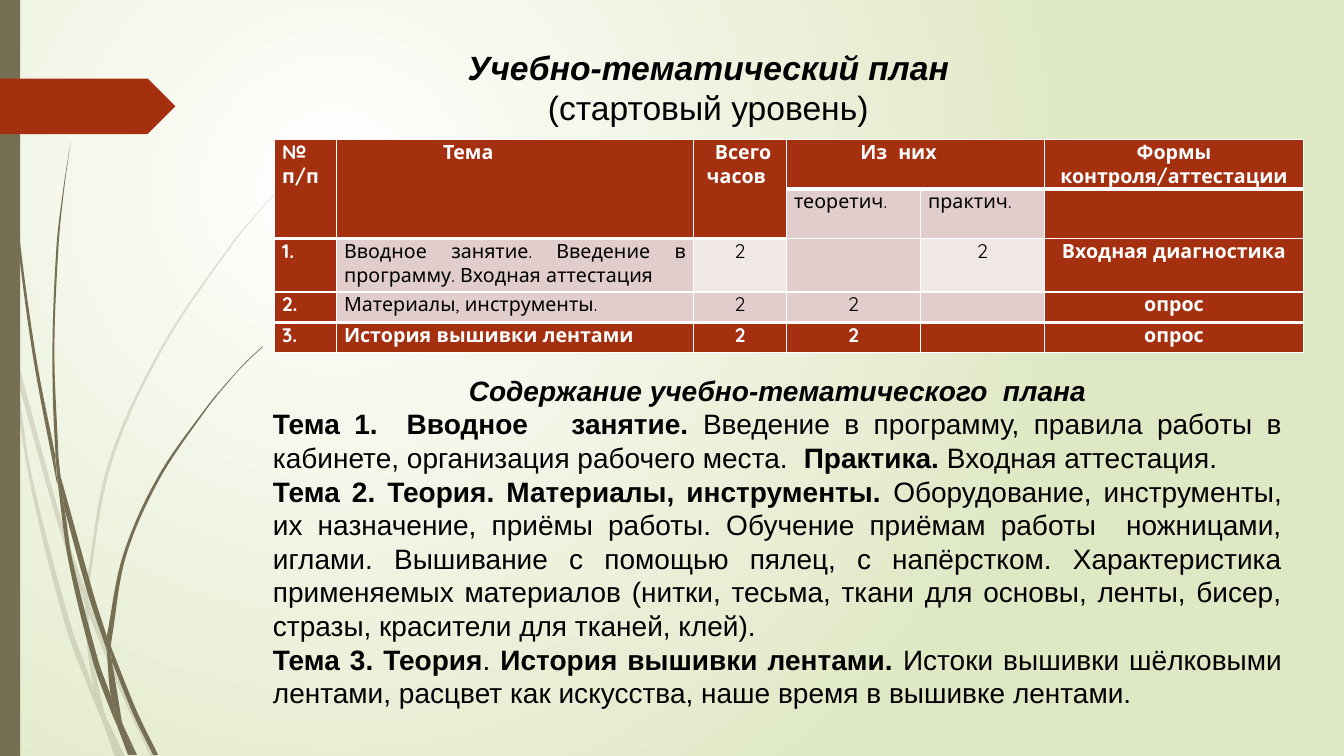
from math import dist

from lxml import etree
from pptx import Presentation
from pptx import util as u
from pptx.dml.color import RGBColor
from pptx.enum import shapes, text
from pptx.oxml.ns import qn


class Theme:
    olive, rust = RGBColor.from_string("766F54"), RGBColor.from_string("A53010")
    rose, pale_rose = RGBColor.from_string("E1CDCC"), RGBColor.from_string("F0E8E7")
    white, black = RGBColor.from_string("FFFFFF"), RGBColor.from_string("000000")
    meadow = RGBColor.from_string("DFE8C4")
    table_font, body_font = "Quicksand", "Arial"
    table_size, body_size, title_size = u.Pt(14), u.Pt(20), u.Pt(24)


LEFT, CENTER, JUSTIFY = text.PP_ALIGN.LEFT, text.PP_ALIGN.CENTER, text.PP_ALIGN.JUSTIFY

deck = Presentation()
deck.slide_width, deck.slide_height = u.Cm(33.87), u.Cm(19.05)
page = deck.slides.add_slide(deck.slide_layouts[6])

# Background: radial gradient
backdrop = page.background.fill
backdrop.gradient()
for stop, color in zip(backdrop.gradient_stops, (Theme.white, Theme.meadow)):
    stop.color.rgb = color
gradient = page.element.find(".//" + qn("a:gradFill"))
gradient.remove(gradient.find(qn("a:lin")))
radial = etree.SubElement(gradient, qn("a:path"), {"path": "circle"})
etree.SubElement(radial, qn("a:fillToRect"), l="50000", t="50000", r="100000", b="100000")


def handle(before, here, after):
    """Bezier control point that leaves `here` towards `after` on a smooth curve."""
    ahead = dist(here, after)
    share = ahead / max(1, 3 * (ahead + dist(before, here)))
    return [round(h + (a - b) * share) for b, h, a in zip(before, here, after)]


# Grass: every piece has two curved edges, one there and one back, in hundredths of an inch
pale_grass = [
    ([(0, 282), (9, 322), (11, 350)], [(10, 344), (0, 299)]),
    ([(14, 345), (62, 520), (85, 586)], [(84, 599), (58, 522), (17, 376)]),
    ([(88, 596), (92, 607), (127, 692), (155, 751)], [(150, 751), (123, 694), (88, 610)]),
    ([(105, 711), (124, 751)], [(119, 751)]),
    ([(11, 350), (17, 376), (31, 469), (70, 619), (93, 683), (99, 707), (101, 714)],
     [(92, 693), (65, 621), (28, 470), (11, 350)]),
    ([(84, 599), (87, 646), (93, 683), (96, 692), (105, 711)],
     [(103, 706), (91, 646), (88, 610), (88, 608)]),
    ([(312, 153), (289, 175), (268, 197), (228, 244), (158, 348), (107, 461), (85, 584), (85, 586)],
     [(88, 596), (88, 584), (110, 462), (160, 349), (229, 245), (268, 198), (290, 175), (312, 154)]),
    ([(101, 714), (114, 751)], [(119, 751)]),
    ([(85, 586), (88, 596)], [(88, 610), (88, 608), (84, 599)]),
    ([(93, 683), (96, 692), (105, 711), (119, 751)], [(101, 714), (99, 707)]),
]
dark_grass = [
    ([(3, 0), (4, 48), (7, 110), (17, 233), (33, 355), (56, 477), (57, 481)],
     [(55, 457), (55, 453), (36, 355), (19, 232), (8, 109), (5, 48), (4, 0)]),
    ([(60, 472), (93, 590), (106, 631)], [(106, 645), (88, 592), (64, 505)]),
    ([(110, 641), (113, 649), (136, 706), (157, 749)], [(152, 749), (132, 708), (111, 656)]),
    ([(57, 477), (64, 505), (72, 556), (98, 657), (110, 691), (116, 717), (117, 722)],
     [(111, 708), (93, 659), (68, 557), (57, 477)]),
    ([(70, 141), (62, 193), (56, 245), (52, 349), (55, 449), (60, 472)],
     [(58, 453), (54, 349), (58, 245), (63, 193), (70, 141)]),
    ([(122, 719), (136, 749)], [(133, 749)]),
    ([(55, 449), (60, 472), (64, 505)], [(57, 477), (55, 453)]),
    ([(260, 344), (245, 358), (231, 373), (204, 405), (156, 474), (122, 551), (106, 631)],
     [(110, 641), (111, 633), (125, 552), (158, 476), (205, 406), (231, 374), (245, 359),
      (261, 344)]),
    ([(117, 722), (131, 749)], [(127, 749)]),
    ([(106, 645), (110, 691), (116, 706), (122, 719)], [(121, 716), (111, 656), (109, 651)]),
    ([(106, 631), (110, 641), (111, 656)], [(109, 651), (106, 645)]),
    ([(110, 691), (116, 706), (122, 719), (133, 749)], [(130, 749), (117, 722), (116, 717)]),
]
for there, back in pale_grass + dark_grass:
    knots = [(10 * x, 10 * y) for x, y in there + back]
    builder = page.shapes.build_freeform(*knots[0], scale=u.Cm(2.54) / 1000)
    builder.add_line_segments(knots[1:], close=True)
    blade = builder.convert_to_shape()
    blade.shadow.inherit = False
    blade.fill.solid()
    blade.fill.fore_color.rgb = Theme.olive
    blade.line.fill.background()
    if (there, back) in pale_grass:
        color = blade.element.spPr.find(".//" + qn("a:srgbClr"))
        etree.SubElement(color, qn("a:alpha"), val="20000")
    # Bend the straight segments of both edges
    segments = blade.element.spPr.findall(".//" + qn("a:lnTo"))
    corner = [(int(p.get("x")), int(p.get("y"))) for p in blade.element.iter(qn("a:pt"))]
    for edge in (corner[:len(there)], corner[len(there):]):
        first = 0 if edge[0] is corner[0] else len(there)
        padded = [edge[0], *edge, edge[-1]]
        for i, (a, b, c, d) in enumerate(zip(padded, padded[1:], padded[2:], padded[3:])):
            segment = segments[first + i]
            segment.tag = qn("a:cubicBezTo")
            for place, (x, y) in enumerate((handle(a, b, c), handle(d, c, b))):
                segment.insert(place, etree.Element(qn("a:pt"), x=str(x), y=str(y)))

# Left stripe and page tag
for kind, top, width, height, color in (
        (shapes.MSO_SHAPE.RECTANGLE, 0, 0.51, 19.05, Theme.olive),
        (shapes.MSO_SHAPE.PENTAGON, 1.98, 4.42, 1.4, Theme.rust)):
    accent = page.shapes.add_shape(kind, 0, u.Cm(top), u.Cm(width), u.Cm(height))
    accent.shadow.inherit = False
    accent.fill.solid()
    accent.fill.fore_color.rgb = color
    accent.line.fill.background()

# Study plan table
rows = [
    ["№\nп/п", "Тема", "Всего\nчасов", "Из  них", "", "Формы контроля/аттестации"],
    ["", "", "", "теоретич.", "практич.", ""],
    ["1.", "Вводное занятие. Введение в программу. Входная аттестация", "2", "", "2",
     "Входная диагностика"],
    ["2.", "Материалы, инструменты.", "2", "2", "", "опрос"],
    ["3.", "История вышивки лентами", "2", "2", "", "опрос"],
]
widths = [1.56, 9, 2.34, 3.38, 3.12, 6.53]
heights = [1.25, 1.22, 1.35, 0.77, 0.75]
indents = {"Тема": 2.5, "Из  них": 1.67, "Всего": 0.15, "часов": 0.14}
plan = page.shapes.add_table(len(rows), len(widths), u.Cm(6.92), u.Cm(3.52),
                             u.Cm(sum(widths)), u.Cm(sum(heights))).table
for column, width in zip(plan.columns, widths):
    column.width = u.Cm(width)
for row, height in zip(plan.rows, heights):
    row.height = u.Cm(height)
for c in range(3):
    plan.cell(0, c).merge(plan.cell(1, c))
plan.cell(0, 3).merge(plan.cell(0, 4))

for r, row in enumerate(rows):
    for c, wording in enumerate(row):
        cell = plan.cell(r, c)
        strong = r in (0, 4) or c in (0, 5) or (r == 1 and c < 3)
        cell.margin_left = cell.margin_right = u.Cm(0.19)
        cell.margin_top = cell.margin_bottom = 0
        # Heavy rules close the header and open the last row
        top, bottom = (3 if edge in (1, 4) or (edge == 2 and c < 3) else 1 for edge in (r, r + 1))
        for side, weight in (("L", 1), ("R", 1), ("T", top), ("B", bottom)):
            border = etree.SubElement(cell._tc.get_or_add_tcPr(), qn("a:ln" + side),
                                      w=str(u.Pt(weight)))
            paint = etree.SubElement(border, qn("a:solidFill"))
            etree.SubElement(paint, qn("a:srgbClr"), val=str(Theme.white))
        cell.fill.solid()
        light = r == 2 and c in (2, 4)
        cell.fill.fore_color.rgb = (Theme.rust if strong else
                                    Theme.pale_rose if light else Theme.rose)
        cell.text_frame.text = wording
        for para in cell.text_frame.paragraphs:
            centered = c == 5 or para.text in ("2", "Всего")
            para.alignment = CENTER if centered else LEFT if (r, c) == (4, 1) else JUSTIFY
            if para.text in indents:
                para._p.get_or_add_pPr().set("marL", str(u.Cm(indents[para.text])))
            span = para.runs[0] if para.runs else para.add_run()
            span.font.name, span.font.size = Theme.table_font, Theme.table_size
            span.font.bold = strong
            span.font.color.rgb = Theme.white if strong else Theme.black

# Texts: each paragraph is a list of (wording, bold, italic)
title = [
    [("Учебно-тематический план", True, True)],
    [("(стартовый уровень)", False, False)],
]
contents = [
    [("Содержание учебно-тематического  плана", True, True)],
    [("Тема 1.  Вводное   занятие.", True, False),
     (" Введение в программу, правила работы в кабинете, организация рабочего места.  ",
      False, False),
     ("Практика. ", True, False), ("Входная аттестация.", False, False)],
    [("Тема 2. Теория. Материалы, инструменты. ", True, False),
     ("Оборудование, инструменты, их назначение, приёмы работы. Обучение приёмам работы  "
      "ножницами, иглами. Вышивание с помощью пялец, с напёрстком. Характеристика применяемых "
      "материалов (нитки, тесьма, ткани для основы, ленты, бисер, стразы, красители для тканей, "
      "клей).", False, False)],
    [("Тема 3. Теория", True, False), (". ", False, False),
     ("История вышивки лентами. ", True, False),
     ("Истоки вышивки шёлковыми лентами, расцвет как искусства, наше время в вышивке лентами.",
      False, False)],
]
for paragraphs, place, size, anchor in (
        (title, (10.42, 1.04, 14.86, 2.31), Theme.title_size, text.MSO_ANCHOR.MIDDLE),
        (contents, (6.63, 9.28, 25.93, 8.81), Theme.body_size, text.MSO_ANCHOR.TOP)):
    box = page.shapes.add_textbox(*map(u.Cm, place))
    frame = box.text_frame
    frame.word_wrap = True
    frame.auto_size = text.MSO_AUTO_SIZE.SHAPE_TO_FIT_TEXT
    frame.vertical_anchor = anchor
    for i, pieces in enumerate(paragraphs):
        para = frame.add_paragraph() if i else frame.paragraphs[0]
        para.alignment = CENTER if paragraphs is title or i == 0 else JUSTIFY
        for wording, bold, italic in pieces:
            span = para.add_run()
            span.text = wording
            span.font.name, span.font.size = Theme.body_font, size
            span.font.bold, span.font.italic = bold, italic
            span.font.color.rgb = Theme.black

deck.save("out.pptx")
